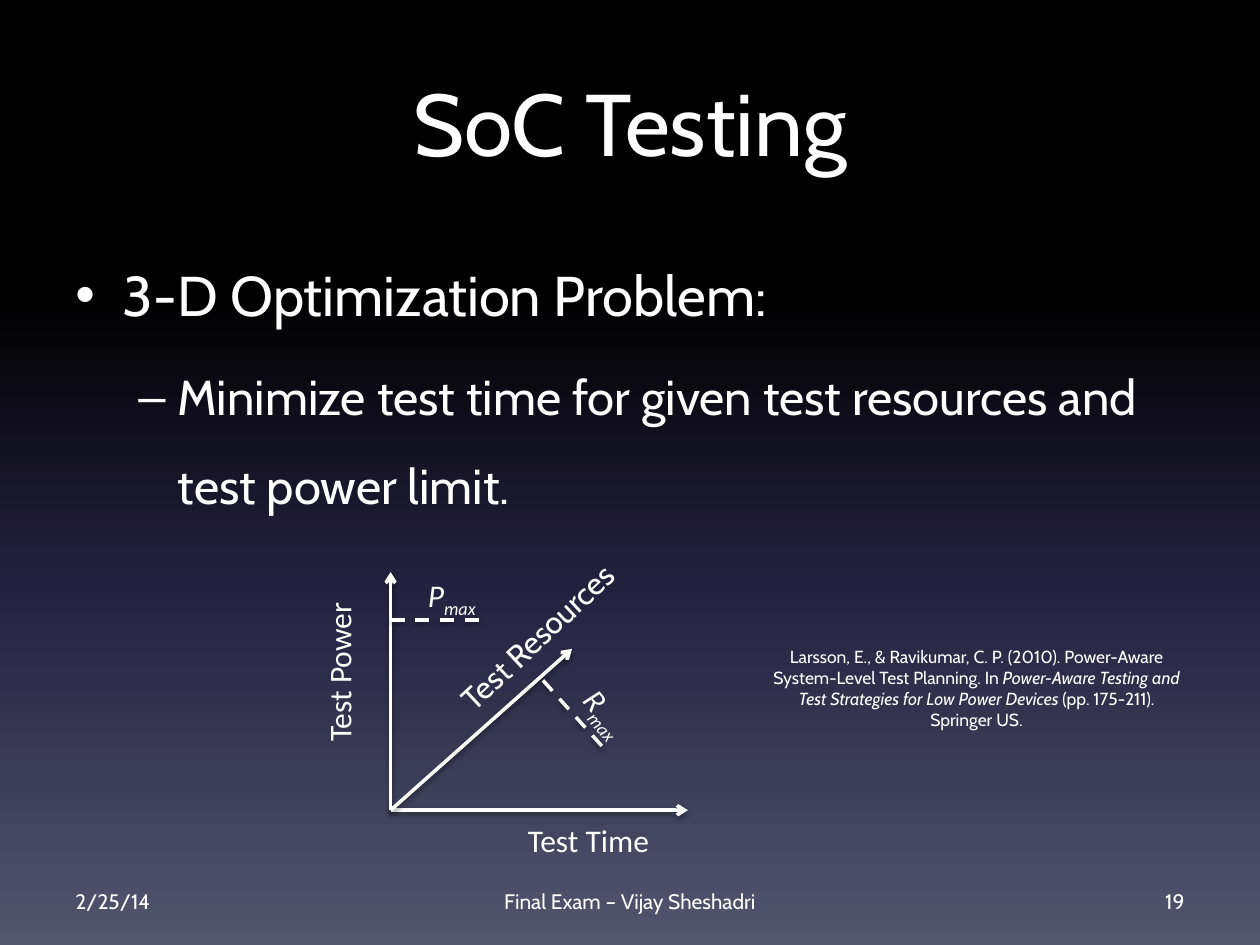
from dataclasses import dataclass

from lxml.etree import SubElement
from pptx import Presentation
from pptx.dml.color import RGBColor
from pptx.enum.dml import MSO_LINE
from pptx.enum.text import MSO_ANCHOR as Anchor, PP_ALIGN as Align
from pptx.enum.shapes import MSO_CONNECTOR as Connector
from pptx.oxml.ns import qn
from pptx.util import Pt


@dataclass(frozen=True)
class Theme:
    ink: RGBColor = RGBColor(0xFF, 0xFF, 0xFF)
    shadow: str = "000000"
    backdrop: tuple = ((0, "000000"), (31, "000000"), (62, "24213E"), (100, "51566D"))
    main_font: str = "Cabin"
    axis_font: str = "Calibri"
    title: int = 50
    bullet: int = 32
    subbullet: int = 28
    label: int = 18
    footer: int = 12
    citation: int = 10
    stroke: int = 2


THEME = Theme()


def add_element(parent, tag, **attributes):
    return SubElement(parent, qn(tag), {key: str(value) for key, value in attributes.items()})


def paint_backdrop(page):
    fill = page.background.fill
    fill.gradient()
    fill.gradient_angle = 270
    stops = page._element.find(".//" + qn("a:gsLst"))
    for stop in list(stops):
        stops.remove(stop)
    for percent, color in THEME.backdrop:
        stop = add_element(stops, "a:gs", pos=percent * 1000)
        add_element(stop, "a:srgbClr", val=color)


def style(para, size, font=THEME.main_font, italic=None):
    para.font.size = Pt(size)
    para.font.name = font
    para.font.color.rgb = THEME.ink
    para.font.italic = italic


def add_box(shapes, left, top, width, height, anchor=Anchor.TOP):
    box = shapes.add_textbox(Pt(left), Pt(top), Pt(width), Pt(height))
    box.text_frame.word_wrap = True
    box.text_frame.vertical_anchor = anchor
    return box


def add_text(shapes, text, place, size, font=THEME.main_font, align=Align.CENTER, anchor=Anchor.TOP):
    box = add_box(shapes, *place, anchor)
    para = box.text_frame.paragraphs[0]
    para.text = text
    para.alignment = align
    style(para, size, font)
    return box


def add_limit_label(shapes, symbol, place):
    box = add_box(shapes, *place)
    para = box.text_frame.paragraphs[0]
    para.alignment = Align.CENTER
    style(para, THEME.label, THEME.axis_font, italic=True)
    para.add_run().text = symbol
    span = para.add_run()
    span.text = "max"
    span._r.get_or_add_rPr().set("baseline", "-25000")
    return box


def set_bullet(para, text, mark, margin, hang, size):
    para.text = text
    para.line_spacing = 1.5
    properties = para._p.get_or_add_pPr()
    properties.set("marL", str(Pt(margin)))
    properties.set("indent", str(-Pt(hang)))
    add_element(properties, "a:buFont", typeface="Arial")
    add_element(properties, "a:buChar", char=mark)
    style(para, size)


def add_bullets(shapes):
    frame = add_box(shapes, 36, 126, 648, 356.4).text_frame
    set_bullet(frame.paragraphs[0], "3-D Optimization Problem:", "•", 27, 27, THEME.bullet)
    para = frame.add_paragraph()
    para.level = 1
    para.space_before = Pt(5.6)
    set_bullet(para, "Minimize test time for given test resources and test power limit.",
               "–", 58.5, 22.5, THEME.subbullet)


def add_line(shapes, start, end, dashed=False):
    line = shapes.add_connector(Connector.STRAIGHT, *map(Pt, start + end))
    line.line.color.rgb = THEME.ink
    line.line.width = Pt(THEME.stroke)
    properties = line._element.spPr
    if dashed:
        line.line.dash_style = MSO_LINE.DASH
    else:
        add_element(properties.find(qn("a:ln")), "a:tailEnd", type="arrow")
    effects = add_element(properties, "a:effectLst")
    shadow = add_element(effects, "a:outerShdw", blurRad=Pt(3.1), dist=Pt(1.6),
                         dir=5400000, rotWithShape=0)
    color = add_element(shadow, "a:srgbClr", val=THEME.shadow)
    add_element(color, "a:alpha", val=38000)


def add_diagram(page):
    shapes = page.shapes.add_group_shape().shapes
    origin = (223.2, 463)
    for tip in ((223.2, 326.9), (393.1, 463), (326.9, 370.8)):
        add_line(shapes, origin, tip)
    add_line(shapes, (223.2, 354.2), (273.6, 354.2), dashed=True)
    add_line(shapes, (310.3, 388.8), (347.8, 430.6), dashed=True)

    add_text(shapes, "Test Time", (283.7, 465.8, 105.1, 29), THEME.label, THEME.axis_font)
    power = add_text(shapes, "Test Power", (179.3, 329, 36, 110.2), THEME.label, THEME.axis_font)
    power.text_frame._txBody.bodyPr.set("vert", "vert270")
    resources = add_text(shapes, "Test Resources", (237.6, 349.2, 139, 29), THEME.label)
    resources.rotation = 317

    add_limit_label(shapes, "P", (233.3, 325.4, 49.7, 29))
    add_limit_label(shapes, "R", (321.8, 392.4, 49.7, 29)).rotation = 50


def add_citation(shapes):
    para = add_box(shapes, 432, 365.8, 252, 55.4).text_frame.paragraphs[0]
    para.alignment = Align.CENTER
    style(para, THEME.citation)
    for text, italic in (
        ("Larsson, E., & Ravikumar, C. P. (2010). Power-Aware System-Level Test Planning. In ", False),
        ("Power-Aware Testing and Test Strategies for Low Power Devices ", True),
        ("(pp. 175-211). Springer US.", False),
    ):
        span = para.add_run()
        span.text = text
        span.font.italic = italic


def add_footer(shapes):
    for text, left, width, align in (
        ("2/25/14", 36, 168, Align.LEFT),
        ("Final Exam – Vijay Sheshadri", 246, 228, Align.CENTER),
        ("19", 516, 168, Align.RIGHT),
    ):
        add_text(shapes, text, (left, 500.5, width, 28.8), THEME.footer,
                 align=align, anchor=Anchor.MIDDLE)


def main():
    deck = Presentation()
    deck.slide_width, deck.slide_height = Pt(720), Pt(540)
    page = deck.slides.add_slide(deck.slide_layouts[6])
    paint_backdrop(page)
    add_text(page.shapes, "SoC Testing", (36, 36, 648, 90), THEME.title)
    add_bullets(page.shapes)
    add_diagram(page)
    add_citation(page.shapes)
    add_footer(page.shapes)
    deck.save("out.pptx")


if __name__ == "__main__":
    main()
